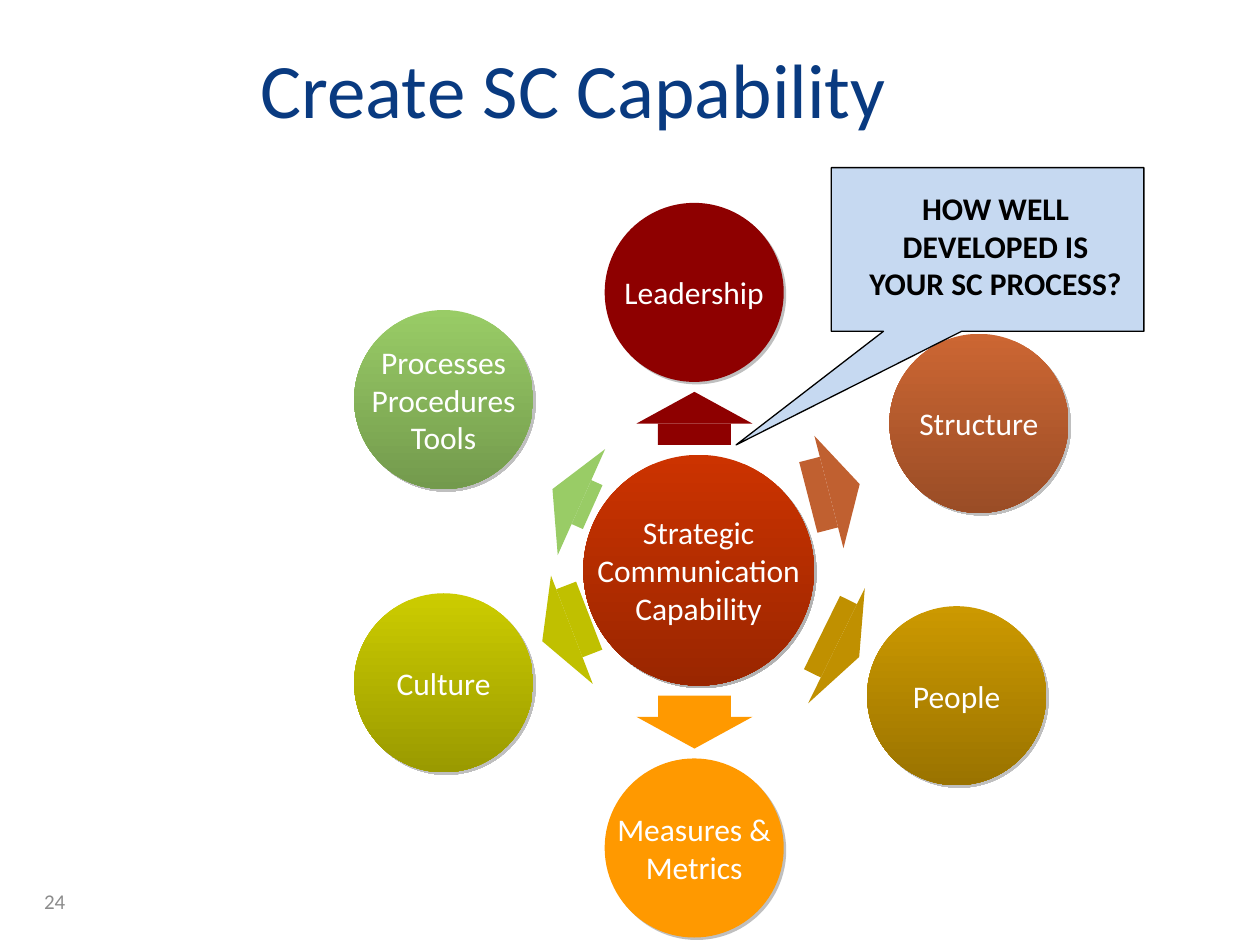
"""Build the slide on the six parts of strategic communication capability."""
from dataclasses import dataclass
from math import cos, radians, sin

from lxml.etree import SubElement
from pptx import Presentation
from pptx.dml.color import RGBColor
from pptx.enum.shapes import MSO_SHAPE as Preset
from pptx.enum.text import MSO_ANCHOR as Anchor, MSO_AUTO_SIZE as AutoSize, PP_ALIGN as Align
from pptx.oxml.ns import qn
from pptx.util import Cm, Pt

FONT = "Calibri"
SIZE = 3.61


@dataclass(frozen=True)
class Circle:
    lines: tuple[str, ...]
    left: float
    top: float
    color: str
    end_color: str = ""
    diameter: float = SIZE
    shadow: str = "808080"


@dataclass(frozen=True)
class Arrow:
    x: float
    y: float
    angle: float
    color: str
    head: tuple[float, float] = (2.34, 0.64)
    shaft: tuple[float, float] = (1.47, 0.43)
    drift: float = 0


def rgb(color: str) -> RGBColor:
    """Turn a hex string into a colour."""
    return RGBColor.from_string(color)


def write(frame, lines, size: float, color: str, align=Align.CENTER, bold: bool = False) -> None:
    """Write each line as a paragraph with one formatted run."""
    for number, line in enumerate(lines):
        paragraph = frame.add_paragraph() if number else frame.paragraphs[0]
        paragraph.alignment = align
        run = paragraph.add_run()
        run.text = line
        run.font.name, run.font.size, run.font.bold = FONT, Pt(size), bold
        run.font.color.rgb = rgb(color)


def add_plain(slide, preset, left: float, top: float, width: float, height: float, color: str):
    """Add a filled preset shape without outline or shadow."""
    part = slide.shapes.add_shape(preset, Cm(left), Cm(top), Cm(width), Cm(height))
    part.shadow.inherit = False
    part.fill.solid()
    part.fill.fore_color.rgb = rgb(color)
    part.line.fill.background()
    return part


def cast_shadow(part, color: str) -> None:
    """Give a shape a hard, half transparent shadow to the lower right."""
    effects = part._element.spPr.find(qn("a:effectLst"))
    outer = SubElement(effects, qn("a:outerShdw"), dist=str(Pt(2)), dir="2700000", algn="ctr", rotWithShape="0")
    tint = SubElement(outer, qn("a:srgbClr"), val=color)
    SubElement(tint, qn("a:alpha"), val="50000")


def add_circle(slide, circle: Circle) -> None:
    """Draw one labelled circle."""
    disc = add_plain(slide, Preset.OVAL, circle.left, circle.top, circle.diameter, circle.diameter, circle.color)
    if circle.end_color:
        disc.fill.gradient()
        disc.fill.gradient_angle = 270
        for stop, color, position in zip(disc.fill.gradient_stops, (circle.color, circle.end_color), (0, 1)):
            stop.color.rgb = rgb(color)
            stop.position = position
    cast_shadow(disc, circle.shadow)
    disc.text_frame.word_wrap = False
    disc.text_frame.vertical_anchor = Anchor.MIDDLE
    write(disc.text_frame, circle.lines, 18, "FFFFFF")


def add_arrow(slide, arrow: Arrow) -> None:
    """Draw a triangular head with its shaft right behind it."""
    turn = radians(arrow.angle)
    gap = (arrow.head[1] + arrow.shaft[1]) / 2
    shaft_x = arrow.x - gap * sin(turn) + arrow.drift * cos(turn)
    shaft_y = arrow.y + gap * cos(turn) + arrow.drift * sin(turn)
    for preset, x, y, (width, height) in (
        (Preset.ISOSCELES_TRIANGLE, arrow.x, arrow.y, arrow.head),
        (Preset.RECTANGLE, shaft_x, shaft_y, arrow.shaft),
    ):
        part = add_plain(slide, preset, x - width / 2, y - height / 2, width, height, arrow.color)
        part.rotation = arrow.angle


def add_callout(slide) -> None:
    """Draw the question callout and its text."""
    balloon = add_plain(slide, Preset.RECTANGULAR_CALLOUT, 16.76, 3.38, 6.3, 3.3, "C6D9F1")
    balloon.adjustments[0], balloon.adjustments[1] = -0.805, 1.194
    balloon.line.color.rgb = rgb("000000")
    balloon.line.width = Pt(0.75)
    question = slide.shapes.add_textbox(Cm(17.25), Cm(3.68), Cm(5.64), Cm(2.57)).text_frame
    question.word_wrap = False
    question.auto_size = AutoSize.SHAPE_TO_FIT_TEXT
    write(question, ("HOW WELL", "DEVELOPED IS", "YOUR SC PROCESS?"), 18, "000000", bold=True)


def add_title(slide) -> None:
    """Place and fill the title."""
    title = slide.shapes.title
    title.left, title.top, title.width, title.height = Cm(5), Cm(1.07), Cm(18.08), Cm(3.18)
    title.text_frame.vertical_anchor = Anchor.TOP
    write(title.text_frame, ("Create SC Capability",), 44, "093A80", Align.LEFT)
    title.text_frame.paragraphs[0].line_spacing = 0.8


def add_page_number(slide) -> None:
    """Write the page number at the lower left."""
    page = slide.shapes.add_textbox(Cm(0.64), Cm(17.65), Cm(5.92), Cm(1.02)).text_frame
    page.word_wrap = True
    page.vertical_anchor = Anchor.MIDDLE
    write(page, ("24",), 12, "8C8C8C", Align.LEFT)


CIRCLES = (
    Circle(("Leadership",), 12.19, 4.09, "8E0000"),
    Circle(("Strategic", "Communication", "Capability"), 11.76, 9.17, "CC3300", "9A2600", 4.65, "666666"),
    Circle(("Processes", "Procedures", "Tools"), 7.14, 6.25, "99CC66", "739A4D"),
    Circle(("Structure",), 17.93, 6.73, "CC6633", "9A4D26"),
    Circle(("Culture",), 7.14, 11.96, "CCCC00", "9A9A00"),
    Circle(("People",), 17.48, 12.22, "CC9900", "9A7300"),
    Circle(("Measures &", "Metrics"), 12.19, 15.29, "FF9900"),
)
ARROWS = (
    Arrow(11.43, 9.99, 294.1, "99CC66", shaft=(0.97, 0.25)),
    Arrow(11.23, 12.81, 248.9, "C0C000", drift=0.14),
    Arrow(14, 8.22, 0, "8E0000"),
    Arrow(17.02, 9.84, 75.5, "C06030"),
    Arrow(17.09, 13.13, 116.2, "C09000", (2.59, 0.51), (1.65, 0.38), -0.11),
    Arrow(14, 14.77, 180, "FF9900"),
)


def main() -> None:
    """Build and save the slide."""
    deck = Presentation()
    deck.slide_width, deck.slide_height = Cm(25.4), Cm(19.05)
    slide = deck.slides.add_slide(deck.slide_layouts[5])
    add_title(slide)
    for circle in CIRCLES:
        add_circle(slide, circle)
    for arrow in ARROWS:
        add_arrow(slide, arrow)
    add_callout(slide)
    add_page_number(slide)
    deck.save("out.pptx")


if __name__ == "__main__":
    main()
